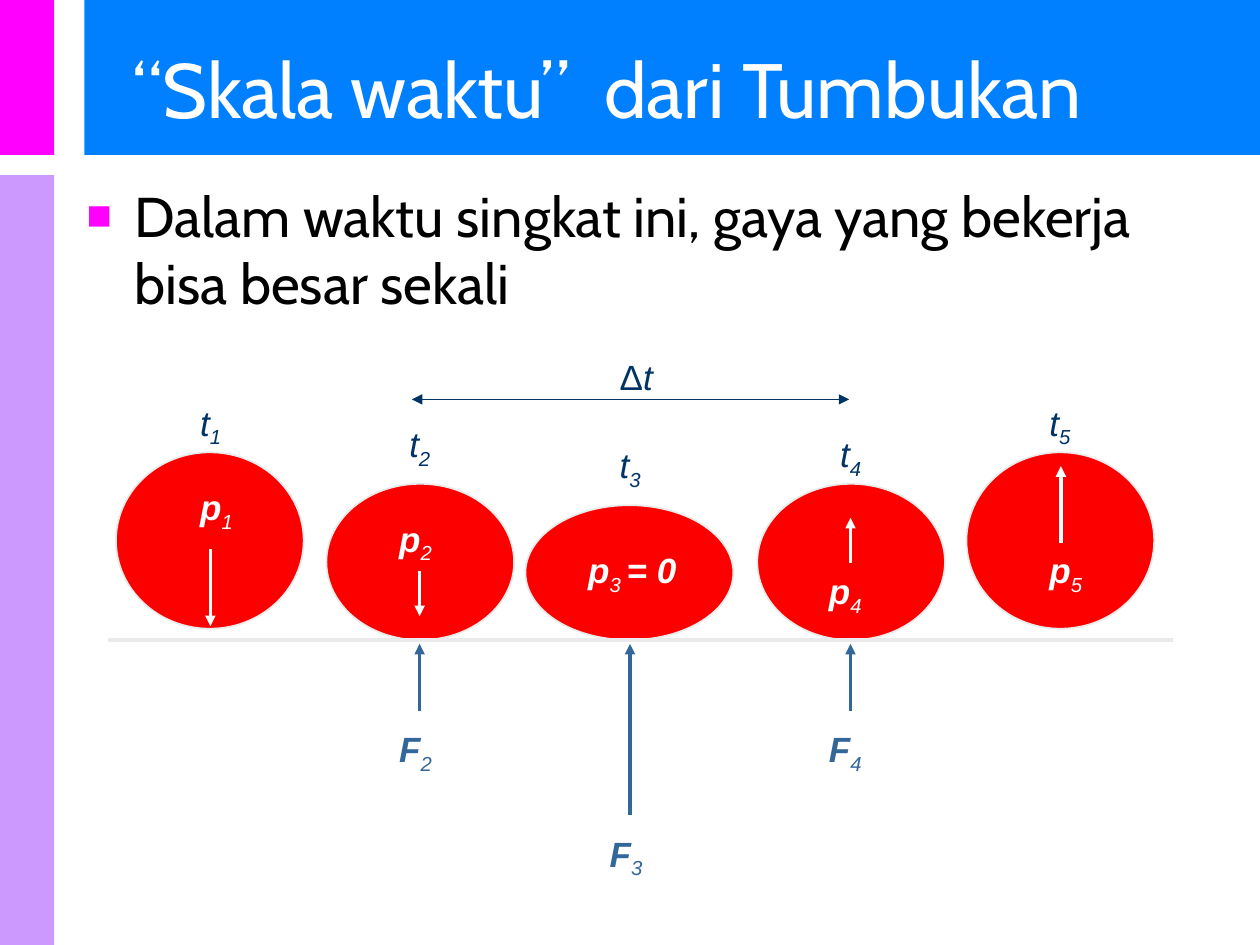
from lxml import etree
from pptx import Presentation
from pptx.dml.color import RGBColor
from pptx.enum.shapes import MSO_CONNECTOR, MSO_SHAPE
from pptx.enum.text import MSO_ANCHOR, MSO_AUTO_SIZE
from pptx.oxml.ns import qn
from pptx.util import Inches, Pt

RECTANGLE, OVAL = MSO_SHAPE.RECTANGLE, MSO_SHAPE.OVAL
STRAIGHT = MSO_CONNECTOR.STRAIGHT
MIDDLE = MSO_ANCHOR.MIDDLE
FIT_SHAPE = MSO_AUTO_SIZE.SHAPE_TO_FIT_TEXT

WHITE, GRAY, RED = "FFFFFF", "EAEAEA", "FC0000"
NAVY, STEEL, MAGENTA = "003366", "336699", "FF00FF"


def rgb(value):
    return RGBColor.from_string(value)


def add_line(start, end, color, width, arrow_ends=()):
    """Draw a straight line; arrow_ends may hold headEnd (start) and tailEnd (end)."""
    line = page.shapes.add_connector(STRAIGHT, *map(Inches, start + end))
    line.line.color.rgb = rgb(color)
    line.line.width = Pt(width)
    outline = line.line._get_or_add_ln()
    for arrow_end in arrow_ends:
        etree.SubElement(outline, qn("a:" + arrow_end), type="triangle")
    etree.SubElement(line._element.spPr, qn("a:effectLst"))


deck = Presentation()
deck.slide_width, deck.slide_height = Inches(10), Inches(7.5)
page = deck.slides.add_slide(deck.slide_layouts[6])
page.background.fill.solid()
page.background.fill.fore_color.rgb = rgb(WHITE)

# Colour bands, then the five balls
balls = [
    (0.92, 3.59, 1.49, 1.40),
    (2.59, 3.84, 1.49, 1.24),
    (4.17, 4.01, 1.65, 1.07),
    (6.01, 3.84, 1.49, 1.24),
    (7.67, 3.59, 1.49, 1.40),
]
solids = [
    (RECTANGLE, (0.67, 0, 9.33, 1.23), "0080FF"),
    (RECTANGLE, (0, 0, 0.43, 1.23), MAGENTA),
    (RECTANGLE, (0, 1.39, 0.43, 6.11), "CC99FF"),
] + [(OVAL, ball, RED) for ball in balls]
for kind, place, color in solids:
    solid = page.shapes.add_shape(kind, *map(Inches, place))
    solid.shadow.inherit = False
    solid.fill.solid()
    solid.fill.fore_color.rgb = rgb(color)
    if kind == OVAL:
        solid.line.color.rgb = rgb(GRAY)
        solid.line.width = Pt(1)
    else:
        solid.line.fill.background()

# Title and bullet
headings = [
    ("“Skala waktu”  dari Tumbukan", (0.95, 0.31, 8.93, 0.77), 44, WHITE),
    ("Dalam waktu singkat ini, gaya yang bekerja bisa besar sekali",
     (0.59, 1.39, 9.2, 3.09), 32, "000000"),
]
for text, place, size, color in headings:
    box = page.shapes.add_textbox(*map(Inches, place))
    box.text_frame.word_wrap = True
    box.text_frame.text = text
    para = box.text_frame.paragraphs[0]
    font = para.runs[0].font
    font.name, font.size, font.color.rgb = "Cabin", Pt(size), rgb(color)
    if size == 44:
        box.text_frame.vertical_anchor = MIDDLE
    else:
        properties = para._p.get_or_add_pPr()
        properties.set("marL", str(Inches(0.38)))
        properties.set("indent", str(-Inches(0.38)))
        bullet_color = etree.SubElement(properties, qn("a:buClr"))
        etree.SubElement(bullet_color, qn("a:srgbClr"), val=MAGENTA)
        etree.SubElement(properties, qn("a:buSzPct"), val="75000")
        etree.SubElement(properties, qn("a:buFont"), typeface="Arial")
        etree.SubElement(properties, qn("a:buChar"), char="■")

# Force and momentum arrows: x, tail y, tip y
arrows = [
    (3.33, 5.64, 5.11, STEEL),
    (6.75, 5.64, 5.11, STEEL),
    (5.00, 6.47, 5.11, STEEL),
    (1.67, 4.36, 4.97, WHITE),
    (8.42, 4.31, 3.70, WHITE),
    (3.33, 4.53, 4.89, WHITE),
    (6.75, 4.47, 4.11, WHITE),
]
for x, tail_y, tip_y, color in arrows:
    add_line((x, tail_y), (x, tip_y), color, 2, ["tailEnd"])
add_line((0.86, 5.08), (9.31, 5.08), GRAY, 2)
add_line((3.27, 3.17), (6.74, 3.17), NAVY, 1, ["headEnd", "tailEnd"])

# Labels: symbol, subscript, rest, left, top, width
labels = [
    ("t", "1", "", 1.49, 3.14, 0.38),
    ("t", "2", "", 3.15, 3.31, 0.43),
    ("t", "3", "", 4.82, 3.48, 0.43),
    ("t", "4", "", 6.57, 3.39, 0.43),
    ("t", "5", "", 8.23, 3.14, 0.43),
    ("Δ", "", "t", 4.82, 2.81, 0.52),
    ("p", "1", "", 1.49, 3.81, 0.47),
    ("p", "2", "", 3.07, 4.06, 0.52),
    ("p", "3 ", "= 0", 4.57, 4.31, 0.91),
    ("p", "4", "", 6.48, 4.48, 0.52),
    ("p", "5", "", 8.23, 4.31, 0.52),
    ("F", "2", "", 3.07, 5.73, 0.52),
    ("F", "3", "", 4.74, 6.56, 0.52),
    ("F", "4", "", 6.48, 5.73, 0.52),
]
label_colors = {"t": NAVY, "Δ": NAVY, "p": WHITE, "F": STEEL}
for symbol, subscript, rest, left, top, width in labels:
    box = page.shapes.add_textbox(*map(Inches, (left, top, width, 0.4)))
    box.text_frame.word_wrap = False
    box.text_frame.auto_size = FIT_SHAPE
    para = box.text_frame.paragraphs[0]
    para.line_spacing = 0.9
    for part in filter(None, (symbol, subscript, rest)):
        span = para.add_run()
        span.text = part
        font = span.font
        font.name, font.size = "Arial", Pt(20)
        font.color.rgb = rgb(label_colors[symbol])
        font.italic = part != "Δ"
        font.bold = symbol in "pF" and part != subscript
        if part == subscript:
            font._element.set("baseline", "-25000")

deck.save("out.pptx")
